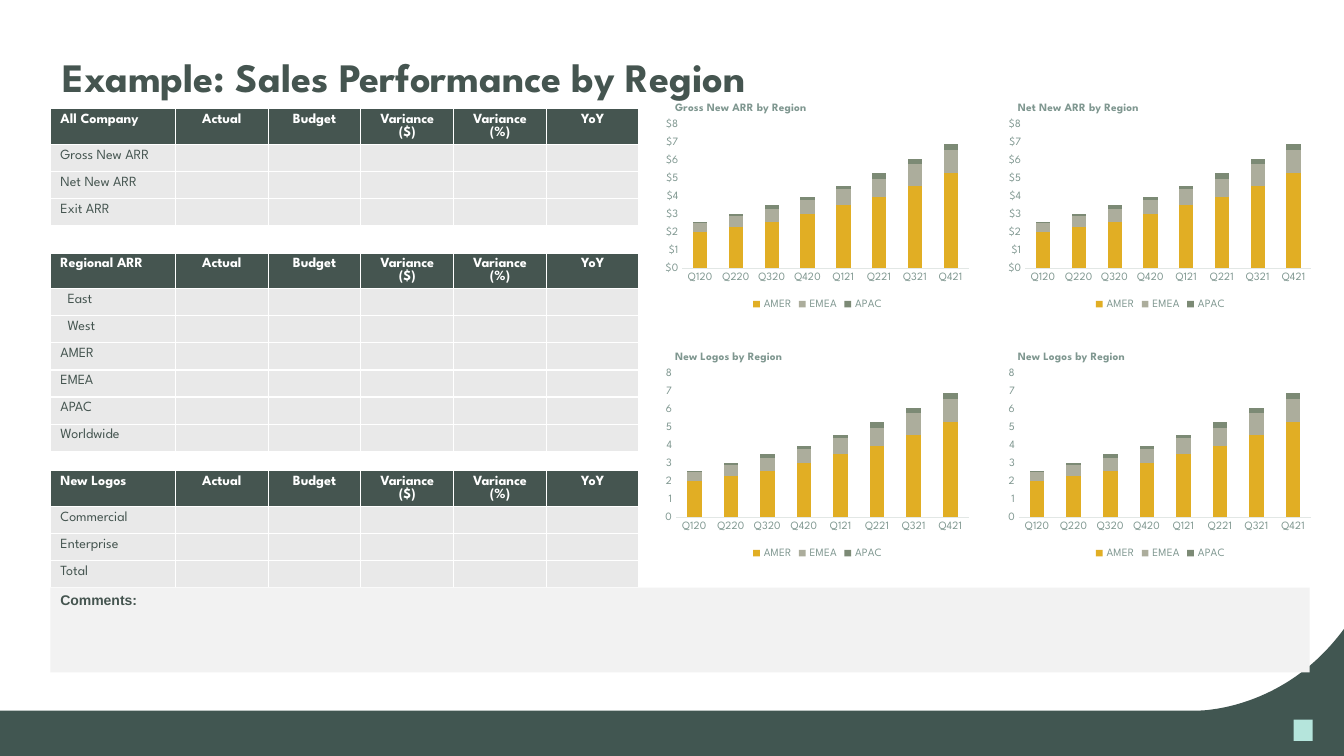
import pptx
import pptx.chart.data
import pptx.dml.color
import pptx.enum.chart
import pptx.enum.shapes
import pptx.enum.text
import pptx.oxml
import pptx.oxml.ns
import pptx.util

Inches = pptx.util.Inches
Pt = pptx.util.Pt
qn = pptx.oxml.ns.qn
ALIGN = pptx.enum.text.PP_ALIGN
ANCHOR = pptx.enum.text.MSO_ANCHOR

COLORS = {
    "dark": "455550", "footer": "415651", "mint": "B5E5DC", "white": "FFFFFF",
    "cell": "E9E9E9", "comments": "F2F2F2", "label": "7F9790", "axis": "E2E7E5",
    "AMER": "E1AE24", "EMEA": "ACAD9C", "APAC": "7C8A75",
}
FONT = "League Spartan"
HEADINGS = ["Actual", "Budget", "Variance ($)", "Variance (%)", "YoY"]
COLUMN_WIDTHS = [1.24] + [0.92] * len(HEADINGS)
HEADER_HEIGHT = 0.35
ROW_HEIGHT = 0.24
TABLES = [
    (1.08, "All Company", ["Gross New ARR", "Net New ARR", "Exit ARR"]),
    (2.51, "Regional ARR", ["East", "West", "AMER", "EMEA", "APAC", "Worldwide"]),
    (4.67, "New Logos", ["Commercial", "Enterprise", "Total"]),
]
INDENTED_ROWS = ["East", "West"]
QUARTERS = ["Q120", "Q220", "Q320", "Q420", "Q121", "Q221", "Q321", "Q421"]
SALES = {
    "AMER": [2, 2.3, 2.6, 3, 3.5, 4, 4.6, 5.3],
    "EMEA": [0.5, 0.6, 0.7, 0.8, 0.9, 1, 1.2, 1.3],
    "APAC": [0.1, 0.1, 0.2, 0.2, 0.2, 0.3, 0.3, 0.3],
}
DOLLARS = '"$"#,##0'
DOLLAR_PLOT = (0.07, 0.16, 0.91, 0.64)
COUNT_PLOT = (0.05, 0.16, 0.93, 0.64)
CHARTS = [
    ("Gross New ARR by Region", DOLLARS, DOLLAR_PLOT),
    ("Net New ARR by Region", DOLLARS, DOLLAR_PLOT),
    ("New Logos by Region", "General", COUNT_PLOT),
    ("New Logos by Region", "General", COUNT_PLOT),
]


def color(name):
    return pptx.dml.color.RGBColor.from_string(COLORS[name])


def set_attributes(target, values):
    for name, value in values.items():
        setattr(target, name, value)


def set_font(font, size, color_name, bold=False, name=FONT):
    set_attributes(font, {"size": Pt(size), "bold": bold, "name": name})
    font.color.rgb = color(color_name)


def set_fill(target, color_name):
    target.fill.solid()
    target.fill.fore_color.rgb = color(color_name)


def write(paragraph, text, size, color_name, bold=False, name=FONT, **layout):
    run = paragraph.add_run()
    run.text = text
    set_font(run.font, size, color_name, bold, name)
    set_attributes(paragraph, layout)


def finish_shape(shape, color_name):
    set_fill(shape, color_name)
    shape.line.fill.background()
    shape.shadow.inherit = False


def add_rectangle(slide, box, color_name):
    rectangle = pptx.enum.shapes.MSO_SHAPE.RECTANGLE
    shape = slide.shapes.add_shape(rectangle, *map(Inches, box))
    finish_shape(shape, color_name)
    return shape


def bezier(points, t):
    weights = [(1 - t) ** 3, 3 * t * (1 - t) ** 2, 3 * t * t * (1 - t), t ** 3]
    return tuple(sum(w * point[axis] for w, point in zip(weights, points)) for axis in (0, 1))


def add_footer(slide):
    curve = [(11.88, 7.05), (11.88, 7.05), (12.73, 7.06), (13.33, 6.24)]
    outline = [(0, 7.5), (0, 7.05)] + [bezier(curve, step / 40) for step in range(41)]
    builder = slide.shapes.build_freeform(Inches(13.33), Inches(7.5))
    builder.add_line_segments([(Inches(x), Inches(y)) for x, y in outline])
    finish_shape(builder.convert_to_shape(), "footer")
    add_rectangle(slide, (12.83, 7.14, 0.19, 0.21), "mint")


def add_title(slide, text):
    title = slide.shapes.title
    set_attributes(title, {
        "left": Inches(0.62), "top": Inches(0.5),
        "width": Inches(11.8), "height": Inches(0.57),
    })
    set_attributes(title.text_frame, {
        "margin_left": 0, "vertical_anchor": ANCHOR.MIDDLE, "word_wrap": True,
        "auto_size": pptx.enum.text.MSO_AUTO_SIZE.NONE,
    })
    write(title.text_frame.paragraphs[0], text, 28.8, "dark", True,
          alignment=ALIGN.LEFT, line_spacing=0.9)


def add_sales_table(slide, top, heading, labels):
    rows = [[heading] + HEADINGS] + [[label] + [""] * len(HEADINGS) for label in labels]
    height = HEADER_HEIGHT + ROW_HEIGHT * len(labels)
    frame = slide.shapes.add_table(
        len(rows), len(COLUMN_WIDTHS), Inches(0.5), Inches(top),
        Inches(sum(COLUMN_WIDTHS)), Inches(height))
    table = frame.table
    table.horz_banding = False
    for column, width in zip(table.columns, COLUMN_WIDTHS):
        column.width = Inches(width)
    for row_index, texts in enumerate(rows):
        header = row_index == 0
        table.rows[row_index].height = Inches(HEADER_HEIGHT if header else ROW_HEIGHT)
        for column_index, text in enumerate(texts):
            cell = table.cell(row_index, column_index)
            set_fill(cell, "dark" if header else "cell")
            paragraph = cell.text_frame.paragraphs[0]
            if text:
                write(paragraph, text, 10, "white" if header else "dark", header,
                      alignment=ALIGN.CENTER if column_index else ALIGN.LEFT)
            else:
                paragraph._p.get_or_add_endParaRPr().set("sz", "1000")
            if text in INDENTED_ROWS:
                cell.margin_left = Inches(0.17)


def set_layout(parent, position, values):
    layout = parent.find(qn("c:layout"))
    if layout is None:
        layout = pptx.oxml.parse_xml(f"<c:layout {pptx.oxml.ns.nsdecls('c')}/>")
        parent.insert(position, layout)
    manual = layout.makeelement(qn("c:manualLayout"))
    layout.append(manual)
    settings = {"xMode": "edge", "yMode": "edge"}
    if len(values) == 4:
        settings = {"layoutTarget": "inner", **settings}
    settings.update(zip("xywh", values))
    for name, value in settings.items():
        element = manual.makeelement(qn(f"c:{name}"), {"val": str(value)})
        manual.append(element)


def format_axes(chart, number_format):
    for axis in (chart.category_axis, chart.value_axis):
        set_attributes(axis, {
            "has_major_gridlines": False,
            "major_tick_mark": pptx.enum.chart.XL_TICK_MARK.NONE,
            "minor_tick_mark": pptx.enum.chart.XL_TICK_MARK.NONE,
        })
        set_font(axis.tick_labels.font, 8, "label")
    set_attributes(chart.category_axis.format.line, {"width": Pt(0.75)})
    chart.category_axis.format.line.color.rgb = color("axis")
    chart.value_axis.format.line.fill.background()
    set_attributes(chart.value_axis, {"minimum_scale": 0, "maximum_scale": 8, "major_unit": 1})
    set_attributes(chart.value_axis.tick_labels, {
        "number_format": number_format, "number_format_is_linked": False,
    })


def add_region_chart(slide, left, top, title, number_format, plot_area):
    data = pptx.chart.data.CategoryChartData()
    data.categories = QUARTERS
    for region, values in SALES.items():
        data.add_series(region, values)
    chart = slide.shapes.add_chart(
        pptx.enum.chart.XL_CHART_TYPE.COLUMN_STACKED, Inches(left), Inches(top),
        Inches(3.12), Inches(2.23), data).chart
    set_font(chart.font, 10, "dark")
    write(chart.chart_title.text_frame.paragraphs[0], title, 8, "label", True)
    set_layout(chart.chart_title._element, 1, (0.04, 0.05))
    set_layout(chart._chartSpace.find(".//" + qn("c:plotArea")), 0, plot_area)
    chart.has_legend = True
    set_attributes(chart.legend, {
        "position": pptx.enum.chart.XL_LEGEND_POSITION.BOTTOM, "include_in_layout": False,
    })
    set_font(chart.legend.font, 8, "label")
    plot = chart.plots[0]
    set_attributes(plot, {"gap_width": 150, "overlap": 100, "vary_by_categories": False})
    for series in plot.series:
        set_fill(series.format, series.name)
    format_axes(chart, number_format)


def add_comments(slide):
    shape = add_rectangle(slide, (0.5, 5.83, 12.49, 0.84), "comments")
    set_attributes(shape.text_frame, {"vertical_anchor": ANCHOR.TOP, "word_wrap": True})
    write(shape.text_frame.paragraphs[0], "Comments:", 10, "dark", True, "Arial",
          alignment=ALIGN.LEFT, line_spacing=0.95)


def main():
    presentation = pptx.Presentation()
    set_attributes(presentation, {"slide_width": Inches(13.33), "slide_height": Inches(7.5)})
    slide = presentation.slides.add_slide(presentation.slide_layouts[5])
    add_footer(slide)
    add_title(slide, "Example: Sales Performance by Region")
    for table in TABLES:
        add_sales_table(slide, *table)
    add_comments(slide)
    for index, chart in enumerate(CHARTS):
        row, column = divmod(index, 2)
        add_region_chart(slide, 6.55 + 3.4 * column, 0.88 + 2.47 * row, *chart)
    presentation.save("out.pptx")


if __name__ == "__main__":
    main()
